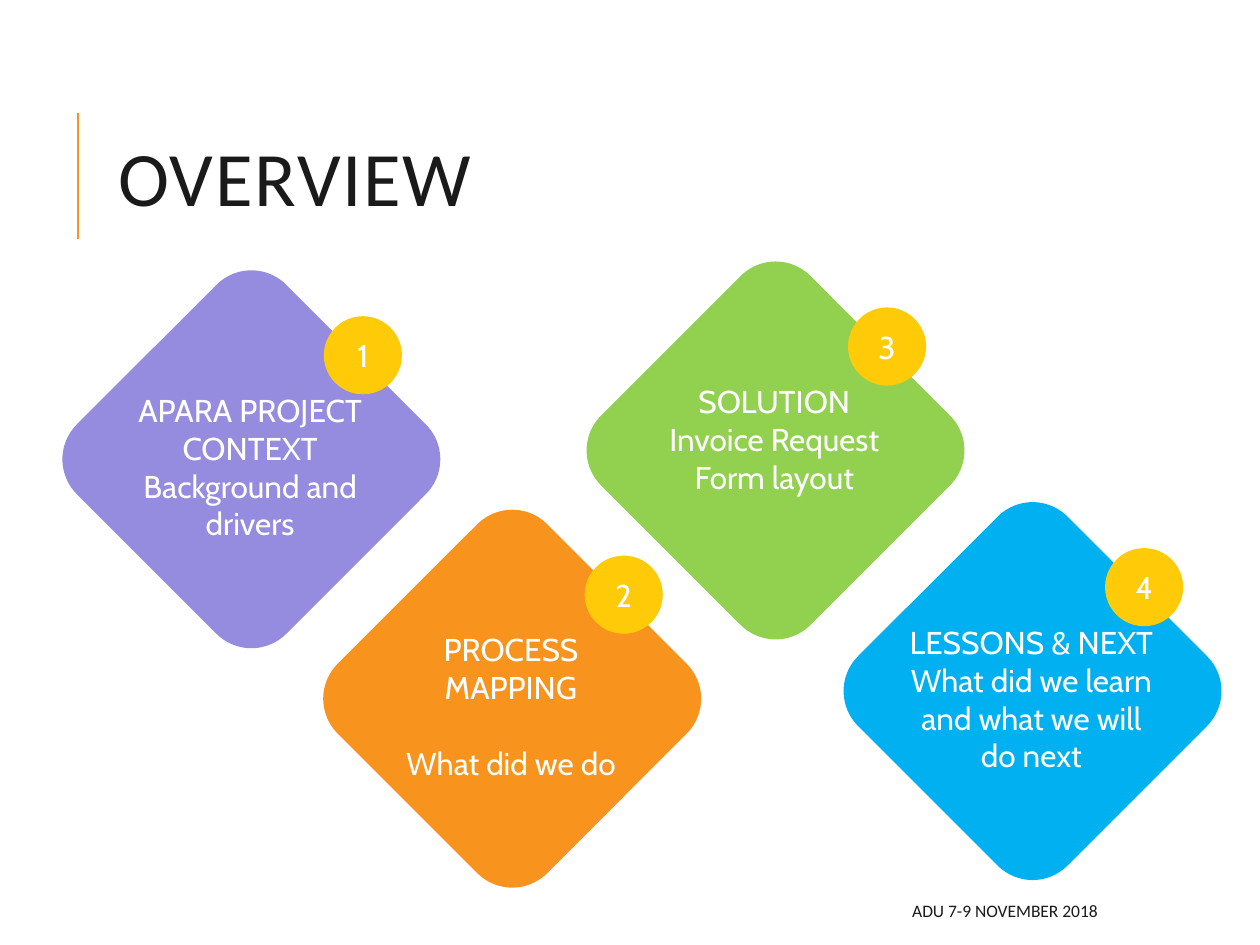
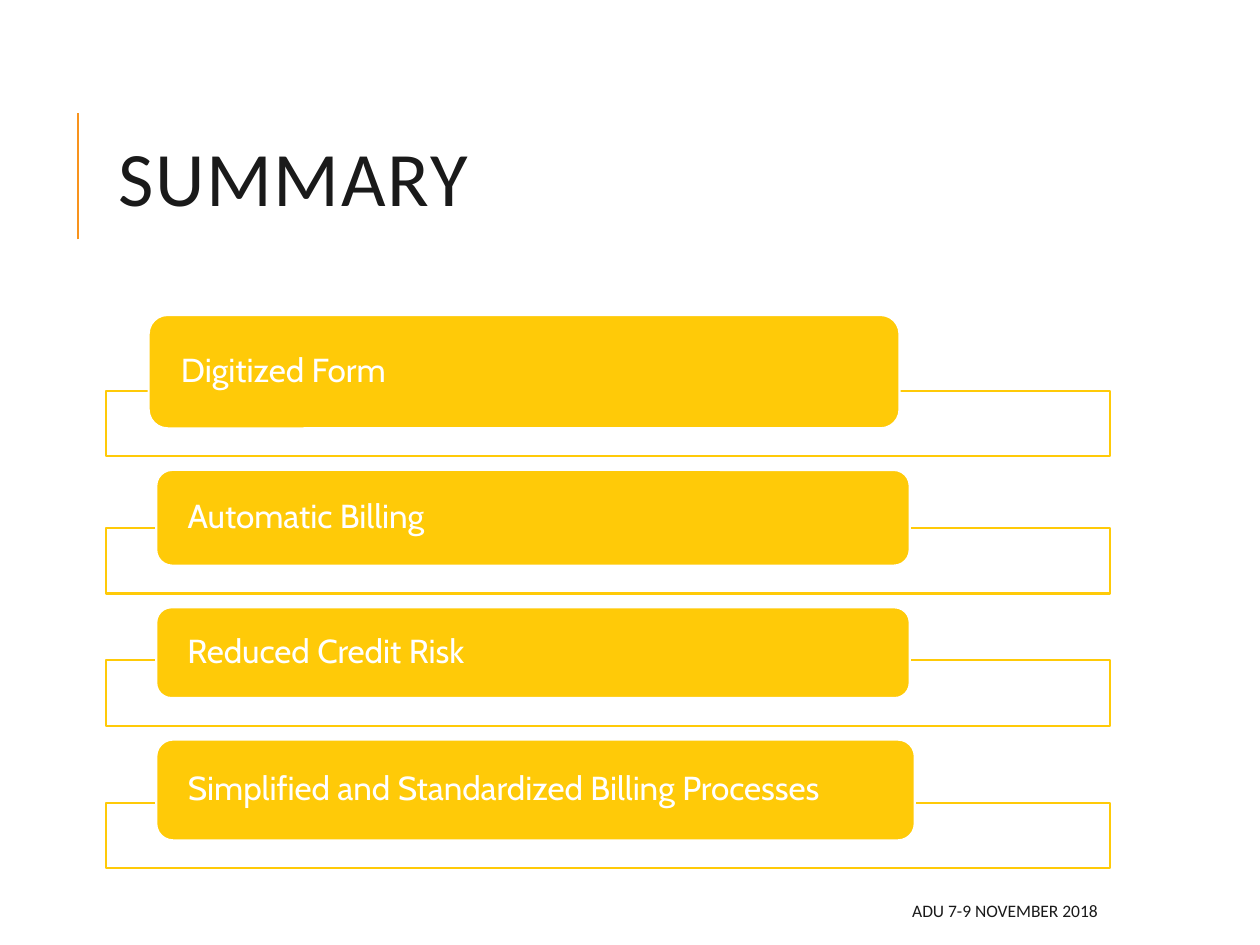
from pptx import Presentation
from pptx.dml.color import RGBColor
from pptx.enum.shapes import MSO_CONNECTOR, MSO_SHAPE
from pptx.enum.text import MSO_ANCHOR, PP_ALIGN
from pptx.oxml.ns import qn
from pptx.util import Pt
from lxml.etree import SubElement

COLORS = {
    "ink": "1A1A1A", "white": "FFFFFF", "orange": "F8931D", "yellow": "FFCA08",
    "purple": "958BDF", "green": "92D050", "blue": "00B0F0",
}
FOOTER = "ADU 7-9 NOVEMBER 2018"

OVERVIEW = [
    {"at": (59.04, 177.84), "color": "purple", "height": 94.3,
     "lines": [("APARA PROJECT CONTEXT", 0), ("Background and drivers", 0)]},
    {"at": (208.08, 314.64), "color": "orange", "height": 72.7,
     "lines": [("PROCESS MAPPING", 0), ("What did we do", 21.7)]},
    {"at": (358.56, 172.8), "color": "green", "height": 72.7,
     "lines": [("SOLUTION", 0), ("Invoice Request Form layout", 0)]},
    {"at": (505.44, 310.32), "color": "blue", "height": 94.3,
     "lines": [("LESSONS & NEXT", 0), ("What did we learn and what we will do next", 0)]},
]
DIAMOND, BADGE = 169.2, 44.64

SUMMARY = [
    ("Digitized Form", 84.96, 429.12, 64.8),
    ("Automatic Billing", 89.28, 430.56, 54.72),
    ("Reduced Credit Risk", 89.28, 430.56, 51.84),
    ("Simplified and Standardized Billing Processes", 89.28, 433.44, 57.6),
]
SUMMARY_TOP, BAR_HEIGHT, OVERLAP, GAP = 180, 37.44, 21.6, 7.92
LEFT, WIDTH = 60.48, 573.84


def rgb(name):
    return RGBColor.from_string(COLORS[name])


def add_shape(s, kind, box, fill, line=None):
    sp = s.shapes.add_shape(kind, *map(Pt, box))
    sp.shadow.inherit = False
    sp.fill.solid()
    sp.fill.fore_color.rgb = rgb(fill)
    if line:
        sp.line.color.rgb = rgb(line)
        sp.line.width = Pt(1.25)
    else:
        sp.line.fill.background()
    return sp


def write(sp, lines, size, font="Cabin", color="white", align=PP_ALIGN.CENTER,
          anchor=MSO_ANCHOR.MIDDLE, spacing=None, tracking=None):
    tf = sp.text_frame
    tf.word_wrap = True
    tf.vertical_anchor = anchor
    for i, (text, before) in enumerate(lines):
        p = tf.add_paragraph() if i else tf.paragraphs[0]
        p.alignment = align
        p.space_before = Pt(before)
        if spacing:
            p.line_spacing = spacing
        r = p.add_run()
        r.text = text
        r.font.name = font
        r.font.size = Pt(size)
        r.font.color.rgb = rgb(color)
        if tracking:
            r.font._element.set("spc", str(tracking))


def add_text(s, box, lines, size, **style):
    write(s.shapes.add_textbox(*map(Pt, box)), lines, size, **style)


def add_slide(prs, title):
    s = prs.slides.add_slide(prs.slide_layouts[6])
    rule = s.shapes.add_connector(MSO_CONNECTOR.STRAIGHT, Pt(44.64), Pt(136.8), Pt(44.64), Pt(64.8))
    rule.line.color.rgb = rgb("orange")
    rule.line.width = Pt(1.5)
    SubElement(rule._element.spPr, qn("a:effectLst"))
    add_text(s, (LEFT, 46.08, WIDTH, 118.08), [(title, 0)], 44, font="Calibri",
             color="ink", align=PP_ALIGN.LEFT, spacing=0.8, tracking=100)
    add_text(s, (285.84, 509.76, 348.48, 21.6), [(FOOTER, 0)], 10, font="Calibri",
             color="ink", align=PP_ALIGN.RIGHT)
    return s


def build_overview(prs):
    s = add_slide(prs, "OVERVIEW")
    for number, topic in enumerate(OVERVIEW, 1):
        x, y = topic["at"]
        diamond = add_shape(s, MSO_SHAPE.ROUNDED_RECTANGLE, (x, y, DIAMOND, DIAMOND), topic["color"])
        diamond.rotation = 45
        badge = add_shape(s, MSO_SHAPE.OVAL, (x + 126, y + 2.88, BADGE, BADGE), "yellow")
        write(badge, [(str(number), 0)], 18)
        add_text(s, (x + 2.88, y + 42.1, 162, topic["height"]), topic["lines"], 18,
                 anchor=MSO_ANCHOR.TOP)


def build_summary(prs):
    s = add_slide(prs, "SUMMARY")
    top = SUMMARY_TOP
    for text, left, width, height in SUMMARY:
        bar_top = top + height - OVERLAP
        add_shape(s, MSO_SHAPE.RECTANGLE, (LEFT, bar_top, WIDTH, BAR_HEIGHT), "white", "yellow")
        label = add_shape(s, MSO_SHAPE.ROUNDED_RECTANGLE, (left, top, width, height), "yellow", "white")
        write(label, [(text, 0)], 19, align=PP_ALIGN.LEFT, spacing=0.9)
        tf = label.text_frame
        tf.margin_left = tf.margin_right = Pt(15.3)
        tf.margin_top = tf.margin_bottom = Pt(0)
        top = bar_top + BAR_HEIGHT + GAP


def main():
    prs = Presentation()
    prs.slide_width, prs.slide_height = Pt(720), Pt(540)
    build_overview(prs)
    build_summary(prs)
    prs.save("out.pptx")


if __name__ == "__main__":
    main()
